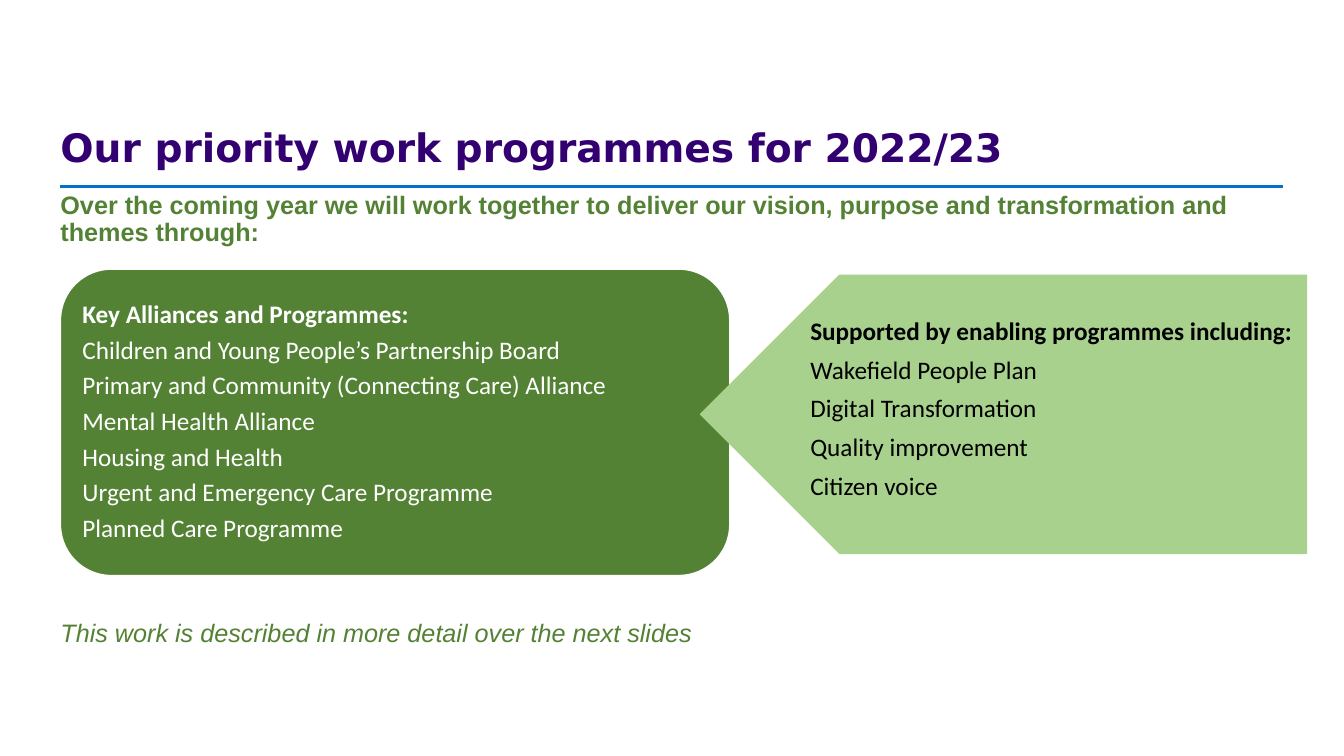
import pptx
import pptx.dml.color
import pptx.enum.shapes
import pptx.enum.text
import pptx.util
from lxml import etree
from collections import namedtuple
from dataclasses import dataclass

Box = namedtuple("Box", "x y w h")
Shape = pptx.enum.shapes.MSO_SHAPE
Anchor = pptx.enum.text.MSO_ANCHOR
Align = pptx.enum.text.PP_ALIGN
COLS, ROWS = 133.33, 75  # grid of tenth-inch cells


@dataclass(frozen=True)
class Theme:
    title: str = "330072"
    rule: str = "0072CE"
    green: str = "548235"
    pale: str = "A9D18E"
    white: str = "FFFFFF"
    black: str = "000000"
    head: str = "DejaVu Sans"
    note: str = "Arial"
    body: str = "Calibri"
    big: int = 28
    size: int = 18
    gap: int = 6


THEME = Theme()


def cell(count):
    return pptx.util.Inches(count / 10)


def place(box):
    return [cell(side) for side in box]


def tint(code):
    return pptx.dml.color.RGBColor.from_string(code)


def assign(item, form):
    for name, value in form.items():
        setattr(item, name, value)


def write(shape, lines, color, font, pads, para, anchor=Anchor.TOP):
    """Fill a shape with lines of (text, font format); pads are left, top, right, bottom."""
    frame = shape.text_frame
    sides = ("margin_left", "margin_top", "margin_right", "margin_bottom")
    assign(frame, {"word_wrap": True, "vertical_anchor": anchor,
                   **dict(zip(sides, map(cell, pads)))})
    for rank, (text, form) in enumerate(lines):
        line = frame.add_paragraph() if rank else frame.paragraphs[0]
        assign(line, {"alignment": Align.LEFT, **para})
        run = line.add_run()
        run.text = text
        assign(run.font, {"size": pptx.util.Pt(THEME.size), "name": font, **form})
        run.font.color.rgb = tint(color)


def block(slide, kind, box, fill, edge):
    shape = slide.shapes.add_shape(kind, *place(box))
    shape.shadow.inherit = False
    shape.fill.solid()
    shape.fill.fore_color.rgb = tint(fill)
    shape.line.color.rgb = tint(edge)
    shape.line.width = pptx.util.Pt(1)
    return shape


def listing(head, items):
    return [(head, {"bold": True})] + [(item, {"bold": False}) for item in items]


def header(slide, box, text):
    """Title above a rule that runs along the foot of the box."""
    foot = box.y + box.h
    line = slide.shapes.add_connector(
        pptx.enum.shapes.MSO_CONNECTOR.STRAIGHT,
        *place((box.x, foot, box.x + box.w, foot)))
    line.line.color.rgb = tint(THEME.rule)
    line.line.width = pptx.util.Pt(1.5)
    etree.SubElement(line._element.spPr, pptx.oxml.ns.qn("a:effectLst"))
    label = slide.shapes.add_textbox(*place(box._replace(h=box.h - 1.6)))
    write(label, [(text, {"bold": True, "size": pptx.util.Pt(THEME.big)})],
          THEME.title, THEME.head, (0, 0, 0, 0), {}, Anchor.BOTTOM)


def note(slide, box, text, form):
    label = slide.shapes.add_textbox(*place(box))
    write(label, [(text, form)], THEME.green, THEME.note, (0, 0, 0, 0),
          {"line_spacing": 0.9})


def panel(slide, box, head, items):
    shape = block(slide, Shape.ROUNDED_RECTANGLE, box, THEME.green, THEME.white)
    write(shape, listing(head, items), THEME.white, THEME.body, (0.7,) * 4,
          {"line_spacing": 0.9, "space_after": pptx.util.Pt(THEME.gap)},
          Anchor.MIDDLE)


def arrow(slide, box, head, items):
    """Left-pointing block with its list set in a box over it."""
    shape = block(slide, Shape.PENTAGON, box, THEME.pale, THEME.pale)
    shape.rotation = 180
    label = slide.shapes.add_textbox(
        *place((box.x + 9.9, box.y + 3.5, 51.5, 19.5)))
    write(label, listing(head, items), THEME.black, THEME.body, (1, 0.5, 1, 0.5),
          {"space_after": pptx.util.Pt(THEME.gap)})


def main():
    deck = pptx.Presentation()
    deck.slide_width, deck.slide_height = cell(COLS), cell(ROWS)
    slide = deck.slides.add_slide(deck.slide_layouts[6])
    left = 6
    wide = COLS - 2 * left
    header(slide, Box(left, 7.6, wide, 10.9),
           "Our priority work programmes for 2022/23")
    note(slide, Box(left, 19.1, wide, 5.5),
         "Over the coming year we will work together to deliver our vision, "
         "purpose and transformation and themes through:", {"bold": True})
    panel(slide, Box(left, 26.7, 66.4, 30.4), "Key Alliances and Programmes:", [
        "Children and Young People’s Partnership Board",
        "Primary and Community (Connecting Care) Alliance",
        "Mental Health Alliance",
        "Housing and Health",
        "Urgent and Emergency Care Programme",
        "Planned Care Programme",
    ])
    arrow(slide, Box(69.5, 27.3, 60.1, 27.6),
          "Supported by enabling programmes including:", [
              "Wakefield People Plan",
              "Digital Transformation",
              "Quality improvement",
              "Citizen voice",
          ])
    note(slide, Box(left, 61.6, wide, 3),
         "This work is described in more detail over the next slides",
         {"italic": True})
    deck.save("out.pptx")


if __name__ == "__main__":
    main()
